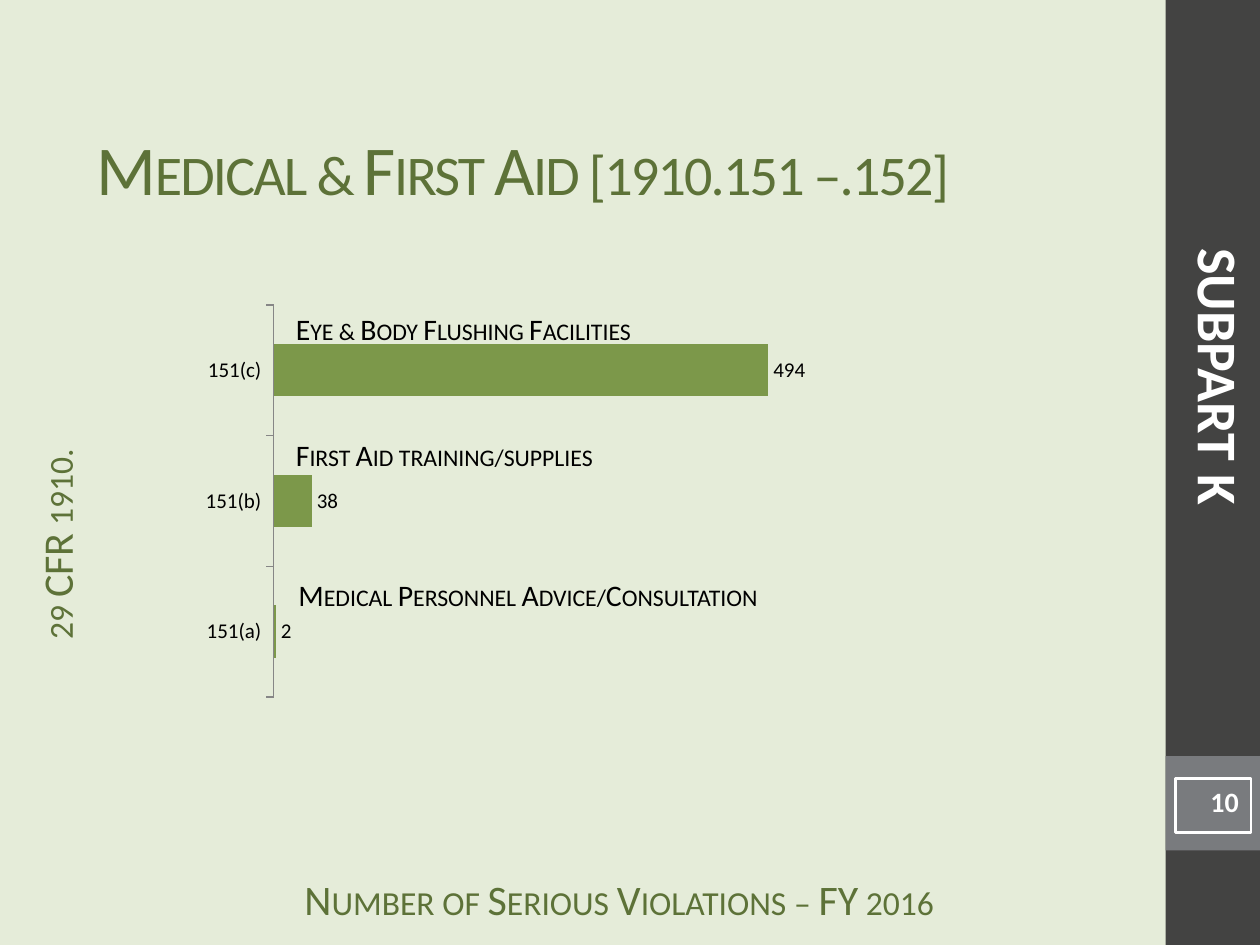
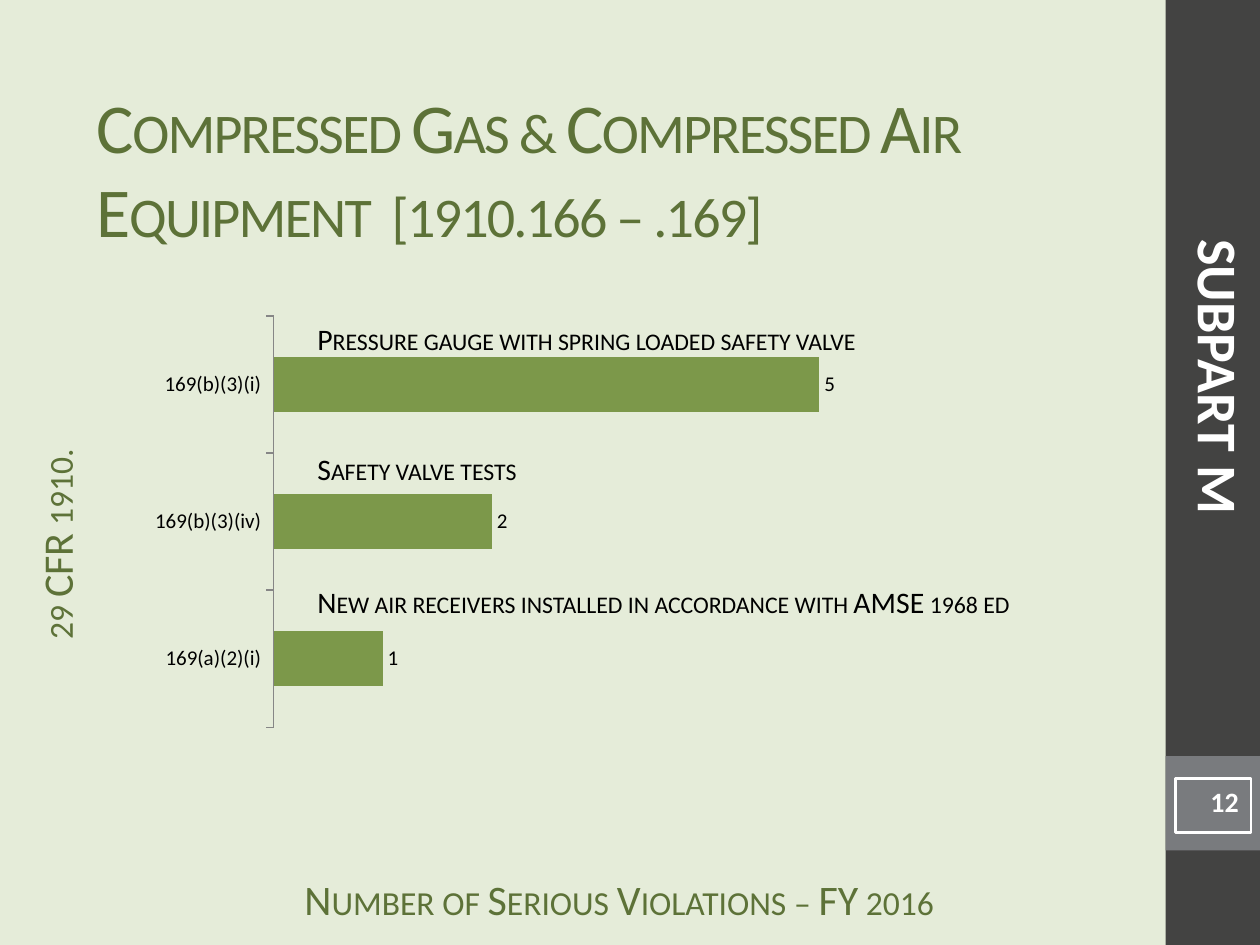
import pptx
import pptx.chart.data
import pptx.dml.color
import pptx.enum.chart
import pptx.enum.shapes
import pptx.enum.text
import pptx.oxml
import pptx.util

WIDE, HIGH = 10, 7.5
BAND = WIDE * 0.075
EDGE = WIDE - BAND
FONT = "Calibri"
HUE = {
    "page": "E5ECD9", "band": "434342", "tile": "797B7E", "head": "5D7238",
    "bar": "7C984A", "axis": "868686", "ink": "000000", "pale": "FFFFFF",
}

FOOT = "Number of Serious Violations – FY 2016"
SIDE = "29 CFR 1910."

# Captions: text, left, top, width.  Plot: share of the chart's frame.
PAGES = [
    {
        "title": "Medical & First Aid [1910.151 –.152]",
        "part": "SUBPART K", "page": "10",
        "frame": (1.5, 2.25, 5.61, 3.42), "plot": (0.12, 0.05, 0.85, 0.91),
        "bars": [("151(a)", 2), ("151(b)", 38), ("151(c)", 494)],
        "top": 600, "step": 50, "wrap": True,
        "notes": [
            ("Eye & Body Flushing Facilities", 2.25, 2.42, 4.94),
            ("First Aid training/supplies", 2.25, 3.42, 4.94),
            ("Medical Personnel Advice/Consultation", 2.27, 4.53, 5.22),
        ],
    },
    {
        "title": "Compressed Gas & Compressed Air Equipment  [1910.166 – .169]",
        "part": "SUBPART M", "page": "12",
        "frame": (1.08, 2.44, 6.42, 3.4), "plot": (0.17, 0.02, 0.81, 0.96),
        "bars": [("169(a)(2)(i)", 1), ("169(b)(3)(iv)", 2), ("169(b)(3)(i)", 5)],
        "top": 6, "step": 1, "wrap": False,
        "notes": [
            ("Pressure gauge with spring loaded safety valve", 2.42, 2.5, 4.59),
            ("Safety valve tests", 2.42, 3.53, 1.82),
            ("New air receivers installed in accordance with AMSE 1968 ed",
             2.42, 4.58, 5.95),
        ],
    },
]

ALIGN = pptx.enum.text.PP_ALIGN
ANCHOR = pptx.enum.text.MSO_ANCHOR


def tint(name):
    return pptx.dml.color.RGBColor.from_string(HUE[name])


def place(box):
    return [pptx.util.Inches(side) for side in box]


def style(font, size, hue, bold=False):
    font.name = FONT
    font.size = pptx.util.Pt(size)
    font.bold = bold
    font.color.rgb = tint(hue)


def write(shape, text, size, hue, align=ALIGN.LEFT, bold=False, small=False,
          track=0, wrap=True, anchor=ANCHOR.TOP):
    """Put one run in a shape; track is letter spacing in points."""
    frame = shape.text_frame
    frame.word_wrap = wrap
    frame.vertical_anchor = anchor
    line = frame.paragraphs[0]
    line.alignment = align
    run = line.add_run()
    run.text = text
    style(run.font, size, hue, bold)
    props = run._r.get_or_add_rPr()
    if small:
        props.set("cap", "small")
    if track:
        props.set("spc", str(track * 100))


def label(slide, box, text, size, hue, turn=0, **look):
    shape = slide.shapes.add_textbox(*place(box))
    shape.rotation = turn
    write(shape, text, size, hue, **look)
    return shape


def block(slide, box, fill=None, line=None):
    shape = slide.shapes.add_shape(
        pptx.enum.shapes.MSO_SHAPE.RECTANGLE, *place(box))
    shape.shadow.inherit = False
    if fill:
        shape.fill.solid()
        shape.fill.fore_color.rgb = tint(fill)
    else:
        shape.fill.background()
    if line:
        shape.line.color.rgb = tint(line)
        shape.line.width = pptx.util.Pt(1.5)
    else:
        shape.line.fill.background()
    return shape


def base(slide):
    """Draw what all slides share: page colour, side band and axis names."""
    slide.background.fill.solid()
    slide.background.fill.fore_color.rgb = tint("page")
    block(slide, (EDGE, 0, BAND, HIGH), "band")
    block(slide, (EDGE, HIGH * 0.8, BAND, BAND), "tile")
    for text, box, turn in ((FOOT, (2.08, 6.93, 5.67, 0.33), 0),
                            (SIDE, (-1.56, 4.03, 4.19, 0.58), 270)):
        name = label(slide, box, text, 24, "head", turn,
                     align=ALIGN.CENTER, small=True)
        name.text_frame.margin_top = 0


def fix_plot(chart, shares):
    """Pin the inner plot area to shares of the chart's frame."""
    area = chart._chartSpace.chart.plotArea
    for old in area.findall(pptx.oxml.ns.qn("c:layout")):
        area.remove(old)
    parts = "".join(f'<c:{key} val="{share}"/>'
                    for key, share in zip("xywh", shares))
    area.insert(0, pptx.oxml.parse_xml(
        f'<c:layout {pptx.oxml.ns.nsdecls("c")}><c:manualLayout>'
        '<c:layoutTarget val="inner"/><c:xMode val="edge"/>'
        f'<c:yMode val="edge"/>{parts}</c:manualLayout></c:layout>'))


def graph(slide, page):
    data = pptx.chart.data.CategoryChartData()
    names, counts = zip(*page["bars"])
    data.categories = names
    data.add_series("Series 1", counts)
    kind = pptx.enum.chart.XL_CHART_TYPE.BAR_CLUSTERED
    chart = slide.shapes.add_chart(kind, *place(page["frame"]), data).chart
    chart.has_title = chart.has_legend = False
    style(chart.font, 10, "ink")
    fix_plot(chart, page["plot"])

    scale = chart.value_axis
    scale.visible = scale.has_major_gridlines = False
    scale.minimum_scale, scale.maximum_scale = 0, page["top"]
    scale.major_unit = page["step"]
    axis = chart.category_axis
    axis.major_tick_mark = pptx.enum.chart.XL_TICK_MARK.OUTSIDE
    axis.format.line.color.rgb = tint("axis")
    style(axis.tick_labels.font, 12, "ink")

    plot = chart.plots[0]
    plot.gap_width = 150
    plot.vary_by_categories = False
    fill = plot.series[0].format.fill
    fill.solid()
    fill.fore_color.rgb = tint("bar")
    plot.has_data_labels = True
    marks = plot.data_labels
    marks.show_value = True
    marks.position = pptx.enum.chart.XL_LABEL_POSITION.OUTSIDE_END
    style(marks.font, 12, "ink")


def build(deck, page):
    slide = deck.slides.add_slide(deck.slide_layouts[6])
    base(slide)
    graph(slide, page)
    label(slide, (0.67, 0.58, 8.56, 1.5), page["title"], 40, "head",
          small=True, track=-1, anchor=ANCHOR.MIDDLE)
    tag = block(slide, (9.33, 6.18, 0.6, 0.43), line="pale")
    write(tag, page["page"], 16, "pale", align=ALIGN.RIGHT, bold=True)
    for text, left, top, width in page["notes"]:
        label(slide, (left, top, width, 0.39), text, 17, "ink",
              small=True, wrap=page["wrap"])
    label(slide, (6.69, 2.67, 5.98, 0.64), page["part"], 32, "pale", 90,
          align=ALIGN.CENTER, bold=True)


def main():
    deck = pptx.Presentation()
    deck.slide_width, deck.slide_height = place((WIDE, HIGH))
    for page in PAGES:
        build(deck, page)
    deck.save("out.pptx")


if __name__ == "__main__":
    main()
